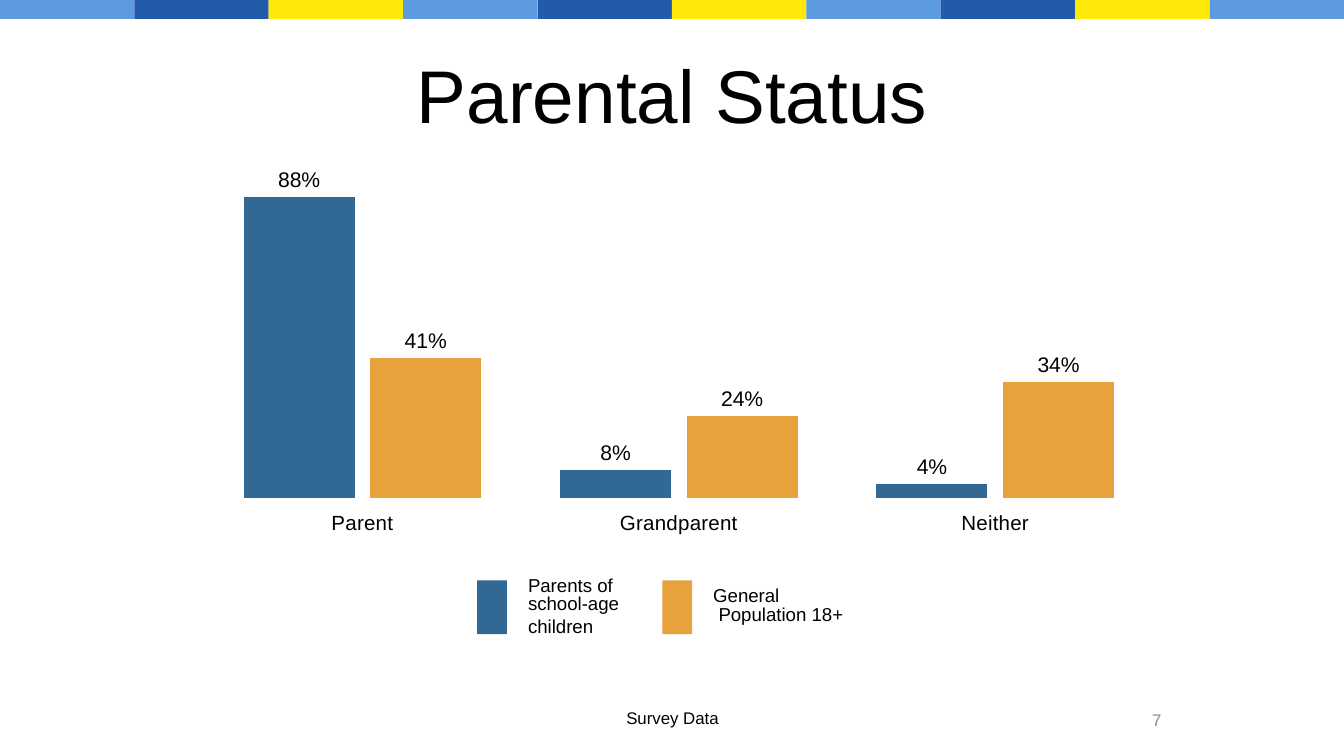
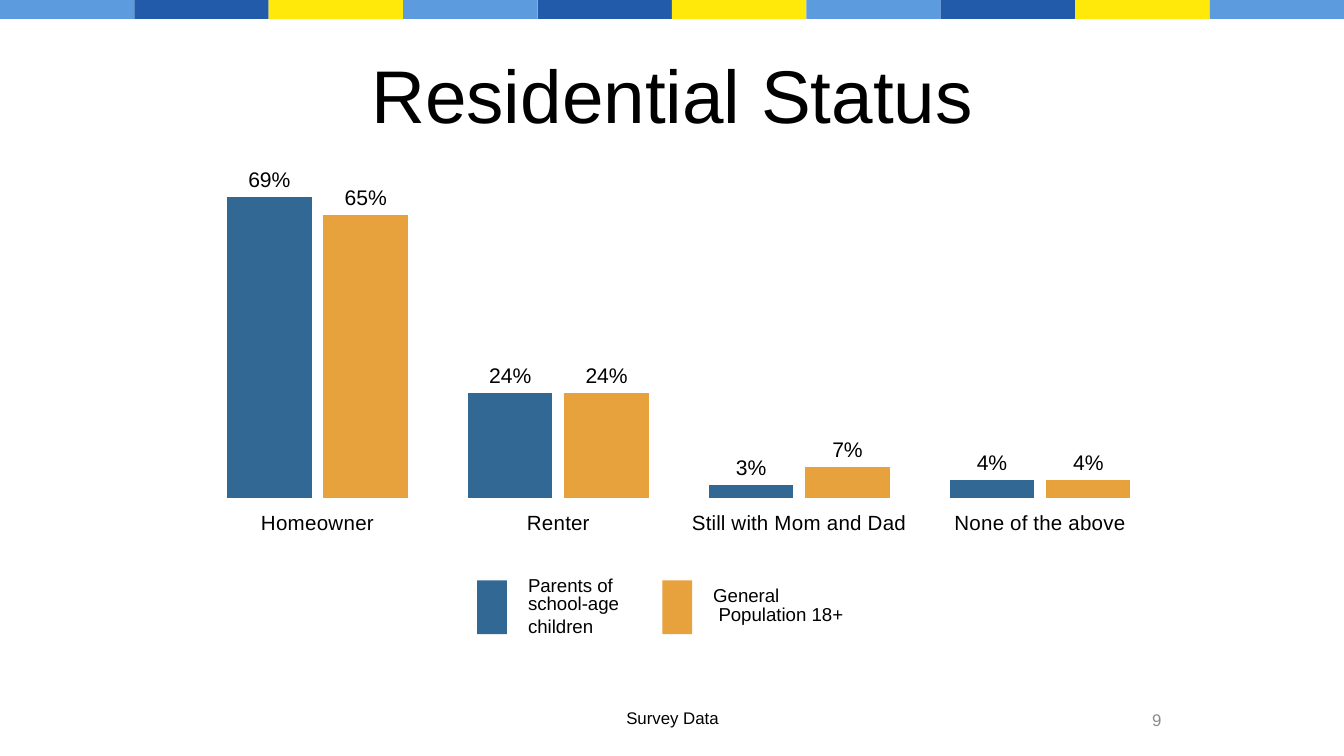
from dataclasses import dataclass

from lxml.etree import SubElement as Sub
from pptx import Presentation
from pptx.chart.data import CategoryChartData as Data
from pptx.dml.color import RGBColor
from pptx.enum.chart import XL_CHART_TYPE as Kind, XL_LABEL_POSITION as Spot, XL_TICK_MARK as Tick
from pptx.enum.shapes import MSO_SHAPE as Form
from pptx.enum.text import MSO_ANCHOR as Anchor, MSO_AUTO_SIZE as Fit, PP_ALIGN as Align
from pptx.oxml import parse_xml
from pptx.oxml.ns import nsdecls, qn
from pptx.util import Cm, Pt

FACE = "Arial"
BLACK, GREY = "000000", "8C8C8C"
BAND = ("5B9BDE", "235BAB", "FFE90A")
MID, TOP, TALL, PLOT = 12.83, 3.05, 7.5, 6.36
ROOM = 1.12


@dataclass
class Line:
    text: str
    indent: float = 0
    gap: float = 0


@dataclass
class Series:
    color: str
    left: float
    top: float
    lines: tuple[Line, ...]

    @property
    def name(self) -> str:
        return " ".join(line.text for line in self.lines)


@dataclass
class Page:
    title: str
    number: str
    span: float
    groups: tuple[str, ...]
    values: tuple[tuple[int, ...], ...]


SERIES = (
    Series("326994", 9.02, 10.91, (Line("Parents of"), Line("school-age"), Line("children", gap=2))),
    Series("E7A13D", 12.52, 11.11, (Line("General"), Line("Population 18+", indent=0.1))),
)
PAGES = (
    Page("Parental Status", "7", 17.94, ("Parent", "Grandparent", "Neither"),
         ((88, 8, 4), (41, 24, 34))),
    Page("Residential Status", "9", 18.21,
         ("Homeowner", "Renter", "Still with Mom and Dad", "None of the above"),
         ((69, 24, 3, 4), (65, 24, 7, 4))),
)


def paint(code: str) -> RGBColor:
    return RGBColor.from_string(code)


def style(font, size: float, color: str = BLACK) -> None:
    font.name, font.size = FACE, Pt(size)
    font.color.rgb = paint(color)


def place(shape, left: float, top: float, width: float, height: float) -> None:
    shape.left, shape.top = Cm(left), Cm(top)
    shape.width, shape.height = Cm(width), Cm(height)


def strip_bullet(para) -> None:
    props = para._p.get_or_add_pPr()
    props.set("marL", "0")
    props.set("indent", "0")
    Sub(props, qn("a:buNone"))


def write(shape, text: str, size: float, align, anchor, color: str = BLACK) -> None:
    frame = shape.text_frame
    frame.text = text
    frame.word_wrap, frame.auto_size = True, Fit.NONE
    frame.vertical_anchor = anchor
    para = frame.paragraphs[0]
    para.alignment, para.space_before = align, Pt(0)
    strip_bullet(para)
    style(para.font, size, color)


def block(slide, color: str, left: float, top: float, width: float, height: float):
    shape = slide.shapes.add_shape(Form.RECTANGLE, Cm(left), Cm(top), Cm(width), Cm(height))
    shape.shadow.inherit = False
    shape.fill.solid()
    shape.fill.fore_color.rgb = paint(color)
    shape.line.fill.background()
    return shape


def band(slide, layout) -> None:
    for step in range(10):
        strip = block(slide, BAND[step % 3], step * 2.54, 0, 2.54, 0.36)
        layout.shapes.element.append(strip.element)


def frame_plot(chart) -> None:
    area = chart.element.find(".//" + qn("c:plotArea"))
    for old in area.findall(qn("c:layout")):
        area.remove(old)
    layout = parse_xml(f"<c:layout {nsdecls('c')}/>")
    manual = Sub(layout, qn("c:manualLayout"))
    rules = (("layoutTarget", "inner"), ("xMode", "edge"), ("yMode", "edge"),
             ("x", 0), ("y", 0), ("w", 1), ("h", round(PLOT / TALL, 3)))
    for tag, val in rules:
        Sub(manual, qn("c:" + tag)).set("val", str(val))
    area.insert(0, layout)


def bars(slide, page: Page) -> None:
    data = Data(number_format='0"%"')
    data.categories = page.groups
    for item, nums in zip(SERIES, page.values):
        data.add_series(item.name, nums)
    chart = slide.shapes.add_chart(
        Kind.COLUMN_CLUSTERED, Cm(MID - page.span / 2), Cm(TOP), Cm(page.span), Cm(TALL), data).chart
    chart.has_legend = chart.has_title = False
    style(chart.font, 11)
    frame_plot(chart)

    scale = chart.value_axis
    scale.minimum_scale = 0
    scale.maximum_scale = round(max(map(max, page.values)) * ROOM, 2)
    scale.has_major_gridlines = scale.visible = False
    axis = chart.category_axis
    axis.format.line.fill.background()
    axis.major_tick_mark = Tick.OUTSIDE
    style(axis.tick_labels.font, 11)

    plot = chart.plots[0]
    plot.gap_width, plot.overlap, plot.vary_by_categories = 71, -14, False
    plot.has_data_labels = True
    labels = plot.data_labels
    labels.show_value, labels.position = True, Spot.OUTSIDE_END
    labels.number_format, labels.number_format_is_linked = '0"%"', False
    style(labels.font, 11.3)
    for item, row in zip(SERIES, plot.series):
        row.format.fill.solid()
        row.format.fill.fore_color.rgb = paint(item.color)


def legend(slide, item: Series) -> None:
    block(slide, item.color, item.left, 10.97, 0.56, 1.02)
    box = slide.shapes.add_textbox(Cm(item.left + 0.96), Cm(item.top), Cm(2.6), Cm(1.14))
    frame = box.text_frame
    frame.word_wrap = True
    frame.margin_left = frame.margin_right = frame.margin_top = frame.margin_bottom = 0
    for rank, line in enumerate(item.lines):
        para = frame.add_paragraph() if rank else frame.paragraphs[0]
        para.text = line.text
        para.line_spacing = Pt(10)
        if line.gap:
            para.space_before = Pt(line.gap)
        if line.indent:
            para._p.get_or_add_pPr().set("marL", str(Cm(line.indent)))
        style(para.font, 10)


def footer(slide, number: str) -> None:
    body = slide.placeholders[1]
    place(body, 10.74, 13.25, 3.94, 0.64)
    write(body, "Survey Data", 9, Align.CENTER, Anchor.TOP)
    box = slide.shapes.add_textbox(Cm(18.95), Cm(13.23), Cm(3.25), Cm(0.76))
    write(box, number, 9, Align.RIGHT, Anchor.MIDDLE, GREY)


def build(deck, layout, page: Page) -> None:
    slide = deck.slides.add_slide(layout)
    if len(deck.slides) == 1:
        band(slide, layout)
    title = slide.shapes.title
    place(title, 1.27, 0.58, 22.86, 2.39)
    write(title, page.title, 40, Align.CENTER, Anchor.MIDDLE)
    bars(slide, page)
    for item in SERIES:
        legend(slide, item)
    footer(slide, page.number)


def main() -> None:
    deck = Presentation()
    deck.slide_width, deck.slide_height = Cm(25.4), Cm(14.29)
    layout = deck.slide_layouts[1]
    for page in PAGES:
        build(deck, layout, page)
    deck.save("out.pptx")


if __name__ == "__main__":
    main()
